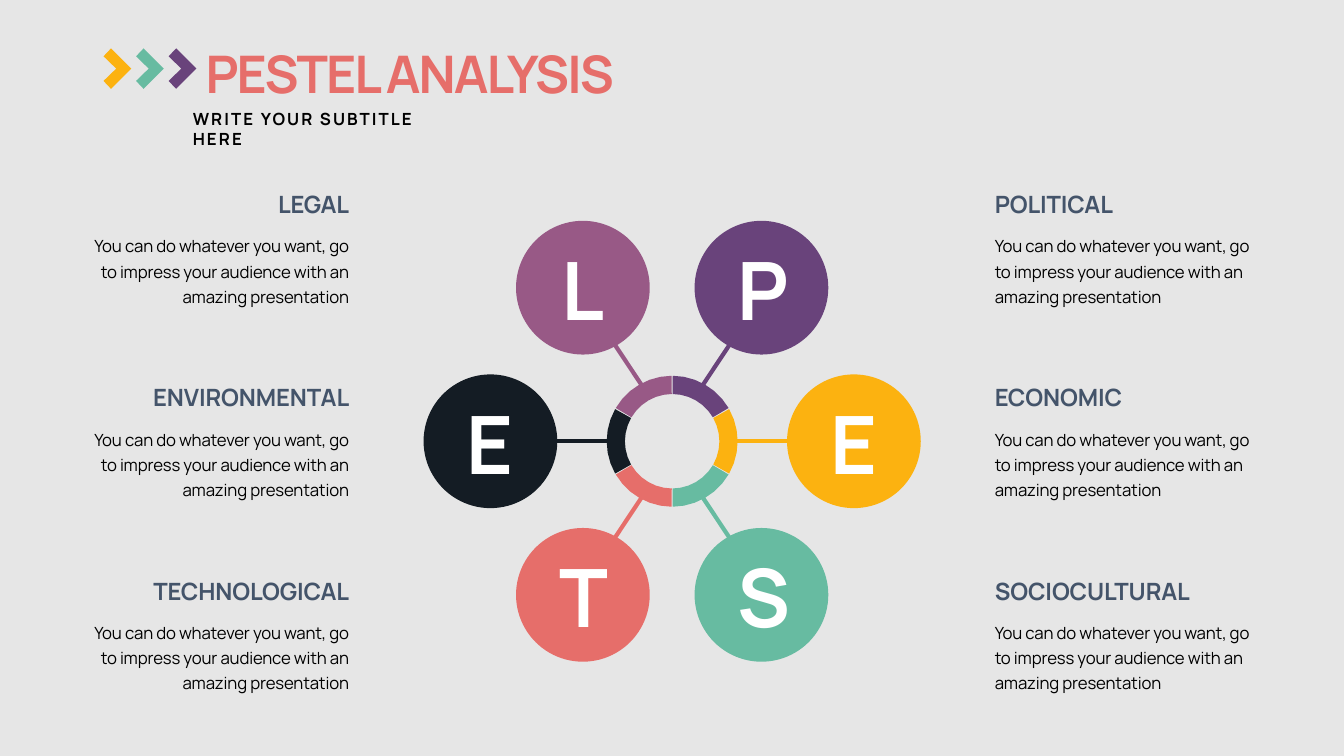
import math

import pptx
import pptx.dml.color
import pptx.enum.shapes
import pptx.enum.text
import pptx.oxml.ns
import pptx.util
from lxml import etree

FONT = "Manrope"
COLOURS = {
    "background": "E6E6E6",
    "heading": "44546A",
    "black": "000000",
    "white": "FFFFFF",
    "purple": "69437B",
    "yellow": "FCB210",
    "green": "67BBA1",
    "coral": "E66E6A",
    "navy": "141C24",
    "plum": "985986",
}
BODY = ("You can do whatever you want, go to impress your audience "
        "with an amazing presentation")
# letter, heading, colour, side (-1 left, 1 right), row (-1 top, 1 bottom)
FACTORS = [
    ("P", "POLITICAL", "purple", 1, -1),
    ("E", "ECONOMIC", "yellow", 1, 0),
    ("S", "SOCIOCULTURAL", "green", 1, 1),
    ("L", "LEGAL", "plum", -1, -1),
    ("E", "ENVIRONMENTAL", "navy", -1, 0),
    ("T", "TECHNOLOGICAL", "coral", -1, 1),
]
SLIDE_WIDTH, SLIDE_HEIGHT = 33.87, 19.05
CENTRE_X, CENTRE_Y = 16.94, 11.12
RING_OUTER, RING_INNER = 1.65, 1.19
ARC_STEPS = 6
DISC = 3.37
LETTER_WIDTH, LETTER_HEIGHT = 1.7, 2.72
ALIGN = pptx.enum.text.PP_ALIGN
ANCHOR = pptx.enum.text.MSO_ANCHOR
SHAPE = pptx.enum.shapes.MSO_SHAPE


def colour(name):
    return pptx.dml.color.RGBColor.from_string(COLOURS[name])


def lengths(*values):
    return [pptx.util.Cm(value) for value in values]


def fill_plain(shape, colour_name):
    shape.shadow.inherit = False
    shape.fill.solid()
    shape.fill.fore_color.rgb = colour(colour_name)
    shape.line.fill.background()


def add_plain_shape(slide, kind, left, top, width, height, colour_name):
    shape = slide.shapes.add_shape(kind, *lengths(left, top, width, height))
    fill_plain(shape, colour_name)


def add_text(slide, text, left, top, width, height, size, colour_name,
             bold=True, spacing=0, align=ALIGN.LEFT, anchor=ANCHOR.TOP,
             line_spacing=None):
    """Add a one-paragraph text box; spacing is letter spacing in points."""
    box = slide.shapes.add_textbox(*lengths(left, top, width, height))
    frame = box.text_frame
    frame.text = text
    frame.word_wrap = True
    frame.auto_size = pptx.enum.text.MSO_AUTO_SIZE.SHAPE_TO_FIT_TEXT
    frame.vertical_anchor = anchor
    paragraph = frame.paragraphs[0]
    paragraph.alignment = align
    if line_spacing:
        paragraph.line_spacing = pptx.util.Pt(line_spacing)
    run = paragraph.runs[0]
    run.font.name = FONT
    run.font.size = pptx.util.Pt(size)
    run.font.bold = bold
    run.font.color.rgb = colour(colour_name)
    run.font._element.set("spc", str(round(spacing * 100)))


def add_polygon(slide, points, colour_name):
    corners = [lengths(x, y) for x, y in points]
    builder = slide.shapes.build_freeform(*corners[0])
    builder.add_line_segments(corners[1:], close=True)
    fill_plain(builder.convert_to_shape(), colour_name)


def add_chevron(slide, left, colour_name):
    outline = [(0.7, 1.73), (0.19, 1.22), (0, 1.42),
               (0.32, 1.73), (0, 2.04), (0.19, 2.24)]
    add_polygon(slide, [(left + x, y) for x, y in outline], colour_name)


def add_spoke(slide, side, row, colour_name):
    if row:
        inner, outer = (0.76, 1.4), (1.45, 2.44)
    else:
        inner, outer = (1.55, 0), (2.95, 0)
    ends = [value for x, y in (inner, outer)
            for value in (CENTRE_X + side * x, CENTRE_Y + row * y)]
    spoke = slide.shapes.add_connector(
        pptx.enum.shapes.MSO_CONNECTOR.STRAIGHT, *lengths(*ends))
    spoke.line.color.rgb = colour(colour_name)
    spoke.line.width = pptx.util.Pt(3)
    etree.SubElement(spoke._element.spPr, pptx.oxml.ns.qn("a:effectLst"))


def add_ring_segment(slide, side, row, colour_name):
    middle = math.degrees(math.atan2(row * math.sqrt(3), side))
    angles = [math.radians(middle - 29.5 + 59 * step / ARC_STEPS)
              for step in range(ARC_STEPS + 1)]
    points = [(CENTRE_X + radius * math.cos(angle),
               CENTRE_Y + radius * math.sin(angle))
              for radius, arc in ((RING_OUTER, angles),
                                  (RING_INNER, angles[::-1]))
              for angle in arc]
    add_polygon(slide, points, colour_name)


def add_disc(slide, letter, side, row, colour_name):
    x = CENTRE_X + side * (2.25 if row else 4.58)
    y = CENTRE_Y + row * 3.87
    add_plain_shape(slide, SHAPE.OVAL, x - DISC / 2, y - DISC / 2,
                    DISC, DISC, colour_name)
    add_text(slide, letter, x - LETTER_WIDTH / 2, y - LETTER_HEIGHT / 2,
             LETTER_WIDTH, LETTER_HEIGHT, 57.5, "white", spacing=-1.4,
             align=ALIGN.CENTER, anchor=ANCHOR.BOTTOM)


def add_description(slide, heading, side, row):
    left = 24.82 if side > 0 else 2.12
    top = 9.52 + row * 4.87
    align = ALIGN.LEFT if side > 0 else ALIGN.RIGHT
    add_text(slide, heading, left, top, 6.93, 0.98, 17, "heading",
             spacing=-0.1, align=align, anchor=ANCHOR.BOTTOM)
    add_text(slide, BODY, left, top + 1.05, 6.93, 2.79, 12, "black",
             bold=False, spacing=-0.1, align=align, line_spacing=18)


def main():
    presentation = pptx.Presentation()
    presentation.slide_width, presentation.slide_height = lengths(
        SLIDE_WIDTH, SLIDE_HEIGHT)
    slide = presentation.slides.add_slide(presentation.slide_layouts[6])
    add_plain_shape(slide, SHAPE.RECTANGLE, 0, 0, SLIDE_WIDTH, SLIDE_HEIGHT,
                    "background")

    for _, _, name, side, row in FACTORS:
        add_spoke(slide, side, row, name)
    add_text(slide, "PESTEL ANALYSIS", 4.93, 0.91, 29.64, 1.83, 37, "coral",
             spacing=-1.4, anchor=ANCHOR.BOTTOM)
    for _, _, name, side, row in FACTORS:
        add_ring_segment(slide, side, row, name)
    for letter, heading, name, side, row in FACTORS:
        add_disc(slide, letter, side, row, name)
        add_description(slide, heading, side, row)
    for index, name in enumerate(("yellow", "green", "purple")):
        add_chevron(slide, 2.61 + index * 0.82, name)
    add_text(slide, "WRITE YOUR SUBTITLE HERE", 4.61, 2.61, 7.14, 0.76, 12,
             "black", spacing=1.5)

    presentation.save("out.pptx")


if __name__ == "__main__":
    main()
